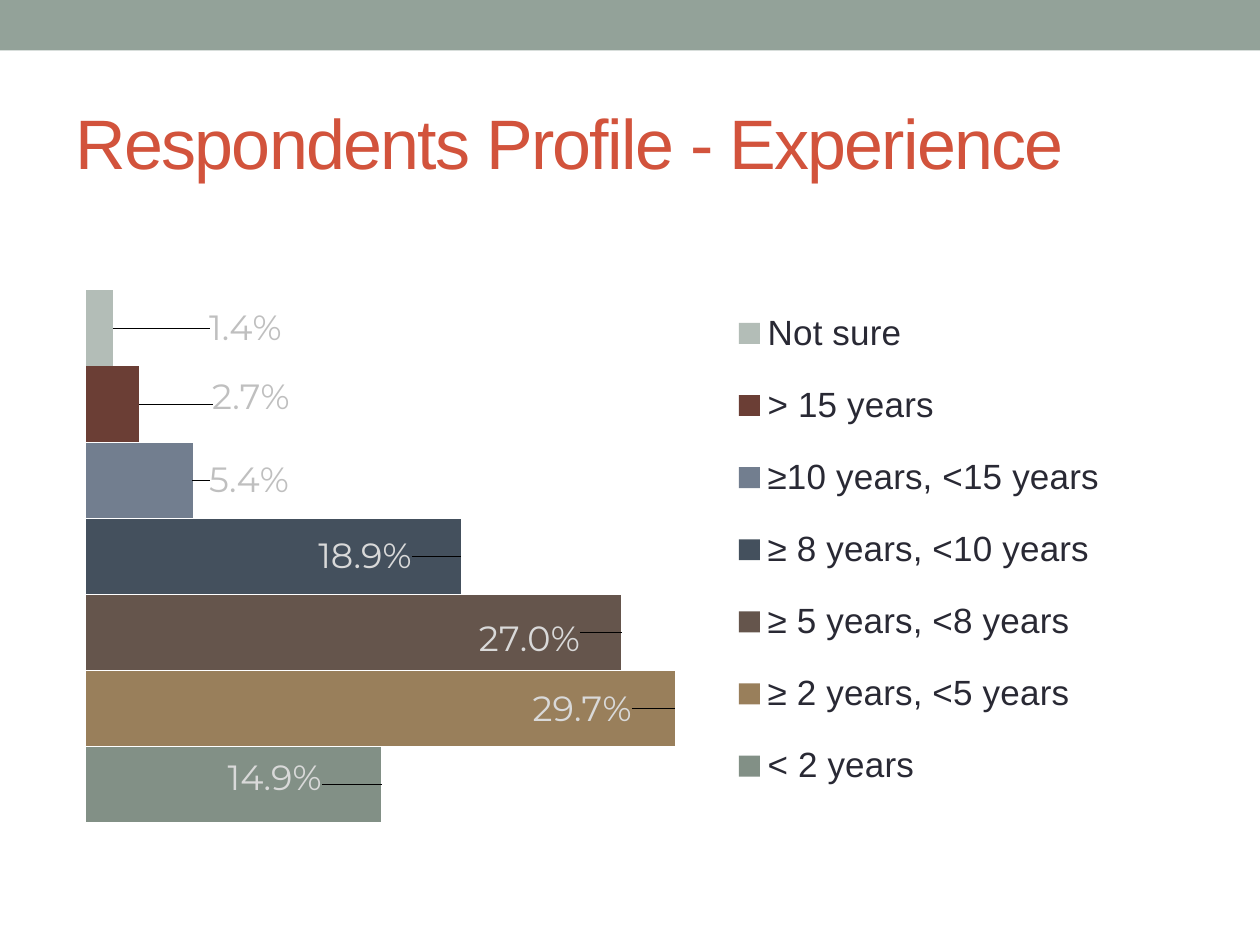
"""Build the slide on the years of experience of the respondents."""
from lxml import etree
from pptx import Presentation
from pptx.chart.data import CategoryChartData
from pptx.dml.color import RGBColor
from pptx.enum.chart import XL_CHART_TYPE, XL_LABEL_POSITION, XL_LEGEND_POSITION
from pptx.enum.shapes import MSO_SHAPE
from pptx.enum.text import MSO_ANCHOR, PP_ALIGN
from pptx.oxml.ns import qn
from pptx.util import Pt

BAR = XL_CHART_TYPE.BAR_CLUSTERED
OUT = XL_LABEL_POSITION.OUTSIDE_END
RIGHT = XL_LEGEND_POSITION.RIGHT
RECT = MSO_SHAPE.RECTANGLE
MIDDLE = MSO_ANCHOR.MIDDLE
LEFT = PP_ALIGN.LEFT

THEME = {
    "band": "93A299", "title": "D2533C", "text": "292934",
    "light": "D9D9D9", "grey": "BFBFBF",
    "font": "Arial", "label": "Montserrat",
    "head": 40, "body": 20,
}
FORMAT = "0.0%"
C15 = "http://schemas.microsoft.com/office/drawing/2012/chart"
GUID = "{CE6537A1-D6FC-4f65-9D91-7224C49458BB}"

ROWS = [
    ("< 2 years", 0.149, "829086", "light", -0.14, -0.01),
    ("≥ 2 years, <5 years", 0.297, "997F5B", "light", -0.13, 0),
    ("≥ 5 years, <8 years", 0.27, "65554C", "light", -0.13, 0.01),
    ("≥ 8 years, <10 years", 0.189, "44505D", "light", -0.13, 0),
    ("≥10 years, <15 years", 0.054, "727E8F", "grey", 0.01, 0),
    ("> 15 years", 0.027, "6B3E35", "grey", 0.06, -0.01),
    ("Not sure", 0.014, "B3BDB7", "grey", 0.08, 0),
]


def style(item, size, tint, face="font"):
    look = {"size": Pt(THEME[size]), "name": THEME[face], "bold": False}
    for key, value in look.items():
        setattr(item, key, value)
    item.color.rgb = RGBColor.from_string(THEME[tint])


def place(owner, index, **parts):
    for old in owner.findall(qn("c:layout")):
        owner.remove(old)
    layout = etree.Element(qn("c:layout"))
    manual = etree.SubElement(layout, qn("c:manualLayout"))
    for key, value in parts.items():
        etree.SubElement(manual, qn(f"c:{key}")).set("val", str(value))
    owner.insert(index, layout)


deck = Presentation()
deck.slide_width, deck.slide_height = Pt(720), Pt(540)
slide = deck.slides.add_slide(deck.slide_layouts[5])

band = slide.shapes.add_shape(RECT, Pt(0), Pt(0), Pt(720), Pt(28.8))
band.shadow.inherit = False
band.fill.solid()
band.fill.fore_color.rgb = RGBColor.from_string(THEME["band"])
band.line.fill.background()

title = slide.shapes.title
spot = {"left": Pt(36), "top": Pt(42), "width": Pt(648), "height": Pt(78)}
for key, value in spot.items():
    setattr(title, key, value)
title.text_frame.vertical_anchor = MIDDLE
line = title.text_frame.paragraphs[0]
line.alignment = LEFT
run = line.add_run()
run.text = "Respondents Profile - Experience"
style(run.font, "head", "title")
run.font._element.set("spc", "-100")

data = CategoryChartData(number_format=FORMAT)
data.categories = ["1"]
for name, share, *rest in ROWS:
    data.add_series(name, [share])
frame = slide.shapes.add_chart(BAR, Pt(36), Pt(126), Pt(648), Pt(384), data)
chart = frame.chart
chart.has_title = False
style(chart.font, "body", "text")

for axis in (chart.category_axis, chart.value_axis):
    axis.has_major_gridlines = False
    axis.visible = False
scale = {"minimum_scale": 0, "maximum_scale": 0.3}
for key, value in scale.items():
    setattr(chart.value_axis, key, value)

chart.has_legend = True
legend = chart.legend
legend.position = RIGHT
legend.include_in_layout = False
style(legend.font, "body", "text")
place(legend._element, 1, xMode="edge", yMode="edge",
      x=0.56, y=0.09, w=0.39, h=0.8)

plot = chart.plots[0]
shape = {"gap_width": 150, "overlap": -1, "vary_by_categories": False}
for key, value in shape.items():
    setattr(plot, key, value)
place(plot._element.getparent(), 0, layoutTarget="inner",
      xMode="edge", yMode="edge", x=0.02, y=0.02, w=0.525, h=0.96)

for bar, (name, share, fill, tint, dx, dy) in zip(plot.series, ROWS):
    bar.format.fill.solid()
    bar.format.fill.fore_color.rgb = RGBColor.from_string(fill)
    labels = bar.data_labels
    looks = {"show_value": True, "number_format": FORMAT,
             "number_format_is_linked": False, "position": OUT}
    for key, value in looks.items():
        setattr(labels, key, value)
    style(labels.font, "body", tint, "label")
    label = bar.points[0].data_label
    style(label.font, "body", tint, "label")
    label.position = OUT
    group = labels._element
    place(group.find(qn("c:dLbl")), 1, x=dx, y=dy)
    extra = etree.SubElement(group, qn("c:extLst"))
    ext = etree.SubElement(extra, qn("c:ext"), nsmap={"c15": C15}, uri=GUID)
    etree.SubElement(ext, f"{{{C15}}}showLeaderLines").set("val", "0")

deck.save("out.pptx")
